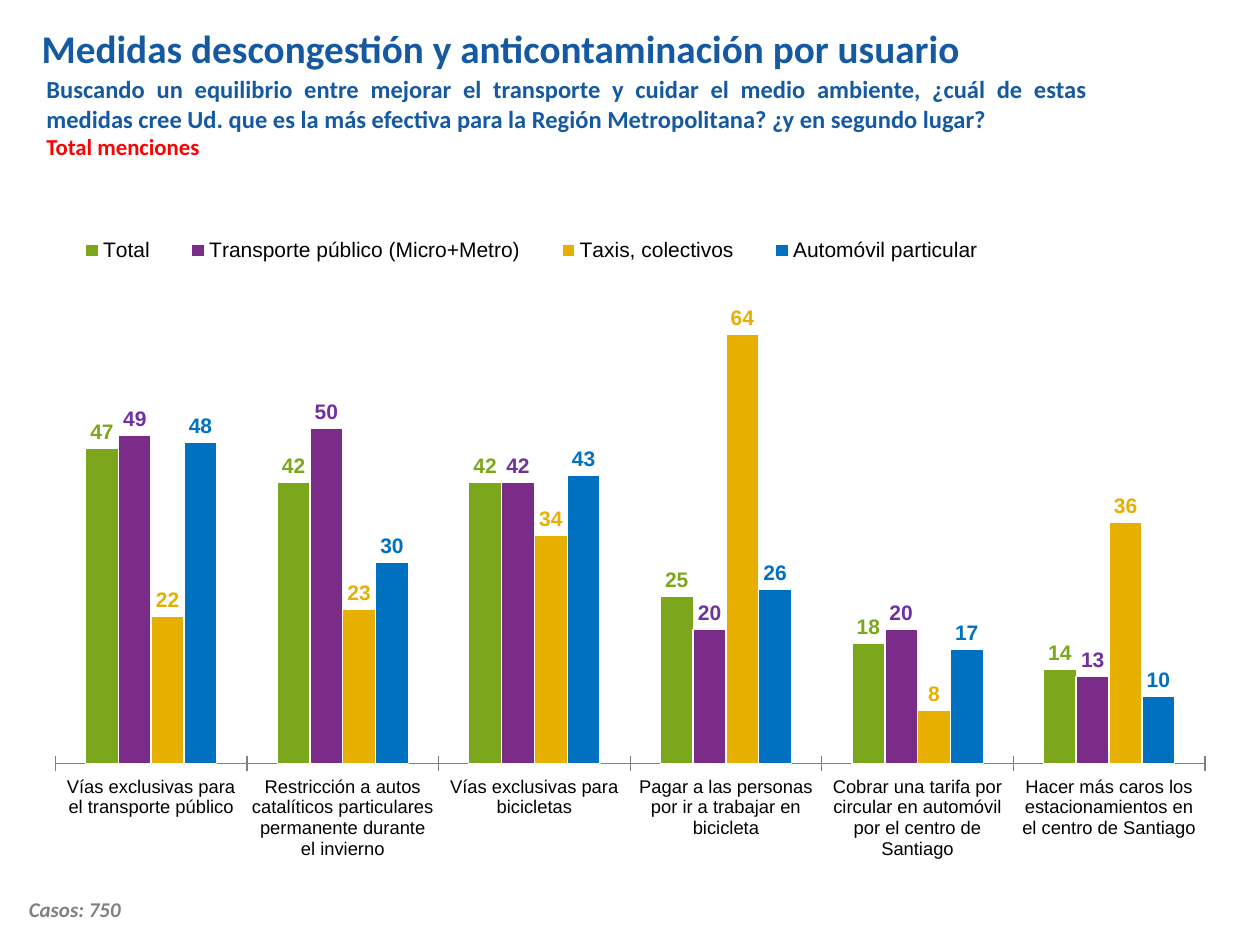
import pptx
import pptx.util
import pptx.chart.data
import pptx.dml.color
import pptx.enum.chart
import pptx.enum.text
import pptx.oxml
import pptx.oxml.ns

Inches = pptx.util.Inches
Pt = pptx.util.Pt
TEXT = pptx.enum.text
CHART = pptx.enum.chart

HUES = {
    "blue": "1559A2", "red": "FF0000", "grey": "808080", "black": "000000",
    "white": "FFFFFF", "green": "7CA71D", "plum": "7B2C88",
    "violet": "7030A0", "gold": "E7AF00", "sky": "0070C0",
}
CATS = [
    "Vías exclusivas para el transporte público",
    "Restricción a autos catalíticos particulares permanente durante el invierno",
    "Vías exclusivas para bicicletas",
    "Pagar a las personas por ir a trabajar en bicicleta",
    "Cobrar una tarifa por circular en automóvil por el centro de Santiago",
    "Hacer más caros los estacionamientos en el centro de Santiago",
]
# Name, values, bar colour, label colour, outline width
USERS = [
    ("Total", (47, 42, 42, 25, 18, 14), "green", "green", 0.75),
    ("Transporte público (Micro+Metro)", (49, 50, 42, 20, 20, 13), "plum", "violet", 1),
    ("Taxis, colectivos", (22, 23, 34, 64, 8, 36), "gold", "gold", 0.75),
    ("Automóvil particular", (48, 30, 43, 26, 17, 10), "sky", "sky", 0.75),
]


def rgb(name):
    return pptx.dml.color.RGBColor.from_string(HUES[name])


def style(font, size, hue, face="Calibri", bold=False, italic=False):
    font.size, font.name = Pt(size), face
    font.bold, font.italic = bold, italic
    font.color.rgb = rgb(hue)


def place(shape, left, top, width, height):
    shape.left, shape.top = Inches(left), Inches(top)
    shape.width, shape.height = Inches(width), Inches(height)


def add_title(slide, text):
    title = slide.shapes.title
    place(title, 0.23, 0.06, 9.21, 0.64)
    frame = title.text_frame
    frame.text = text
    frame.auto_size = TEXT.MSO_AUTO_SIZE.NONE
    frame.vertical_anchor = TEXT.MSO_ANCHOR.MIDDLE
    para = frame.paragraphs[0]
    para.alignment = TEXT.PP_ALIGN.LEFT
    style(para.runs[0].font, 22.4, "blue", bold=True)


def add_text(slide, box, lines, align, wrap=True, italic=False):
    """Add a text box; each line is (text, size, colour)."""
    frame = slide.shapes.add_textbox(*map(Inches, box)).text_frame
    frame.word_wrap = wrap
    frame.auto_size = TEXT.MSO_AUTO_SIZE.SHAPE_TO_FIT_TEXT
    frame.text = "\n".join(line[0] for line in lines)
    for para, (_, size, hue) in zip(frame.paragraphs, lines):
        para.alignment = align
        style(para.runs[0].font, size, hue, bold=True, italic=italic)


def set_layout(part, index, box, inner=False):
    """Give a chart part a manual layout, as fractions of the chart."""
    for old in part.findall(pptx.oxml.ns.qn("c:layout")):
        part.remove(old)
    target = '<c:layoutTarget val="inner"/>' if inner else ""
    modes = "".join(f'<c:{k}Mode val="edge"/>' for k in "xy")
    sizes = "".join(f'<c:{k} val="{v}"/>' for k, v in zip("xywh", box))
    part.insert(index, pptx.oxml.parse_xml(
        f'<c:layout {pptx.oxml.ns.nsdecls("c")}><c:manualLayout>'
        f"{target}{modes}{sizes}</c:manualLayout></c:layout>"))


def style_bars(bars, fill, label, width):
    bars.smooth = False
    bars.format.fill.solid()
    bars.format.fill.fore_color.rgb = rgb(fill)
    bars.format.line.color.rgb = rgb("white")
    bars.format.line.width = Pt(width)
    tags = bars.data_labels
    tags.show_value = True
    tags.number_format, tags.number_format_is_linked = "0", False
    tags.position = CHART.XL_LABEL_POSITION.OUTSIDE_END
    style(tags.font, 12, label, "Arial", bold=True)


def add_bars(slide):
    data = pptx.chart.data.CategoryChartData(number_format="0")
    data.categories = CATS
    for name, vals, *_ in USERS:
        data.add_series(name, vals)
    box = map(Inches, (0.31, 1.73, 9.31, 5.15))
    chart = slide.shapes.add_chart(
        CHART.XL_CHART_TYPE.COLUMN_CLUSTERED, *box, data).chart
    style(chart.font, 12, "black")
    chart.has_title = False

    # Bars
    plot = chart.plots[0]
    plot.vary_by_categories = False
    plot.gap_width, plot.overlap = 184, 0
    for bars, (_, _, fill, label, width) in zip(plot.series, USERS):
        style_bars(bars, fill, label, width)

    # Axes
    axis = chart.category_axis
    axis.major_tick_mark = CHART.XL_TICK_MARK.CROSS
    axis.format.line.color.rgb = rgb("grey")
    style(axis.tick_labels.font, 10.5, "black", "Arial")
    scale = chart.value_axis
    scale.minimum_scale, scale.maximum_scale = 0, 70
    scale.has_major_gridlines = False
    scale.visible = False

    # Legend and plot area
    chart.has_legend = True
    legend = chart.legend
    legend.position = CHART.XL_LEGEND_POSITION.TOP
    legend.include_in_layout = False
    style(legend.font, 12, "black", "Arial")
    set_layout(legend._element, 1, (0.01, 0.01, 0.82, 0.08))
    area = chart._chartSpace.chart.plotArea
    set_layout(area, 0, (0.014, 0.118, 0.98, 0.723), inner=True)


def main():
    deck = pptx.Presentation()
    deck.slide_width, deck.slide_height = Inches(10), Inches(7.5)
    slide = deck.slides.add_slide(deck.slide_layouts[5])

    # Sample size and chart
    add_text(slide, (0.13, 7.07, 1.09, 0.3), [("Casos: 750", 12, "grey")],
             TEXT.PP_ALIGN.LEFT, wrap=False, italic=True)
    add_bars(slide)

    # Title and question
    add_title(slide, "Medidas descongestión y anticontaminación por usuario")
    add_text(slide, (0.27, 0.54, 8.46, 1.04), [
        ("Buscando un equilibrio entre mejorar el transporte y cuidar el medio "
         "ambiente, ¿cuál de estas medidas cree Ud. que es la más efectiva para "
         "la Región Metropolitana? ¿y en segundo lugar?", 14, "blue"),
        ("Total menciones", 13, "red"),
    ], TEXT.PP_ALIGN.JUSTIFY)

    deck.save("out.pptx")


if __name__ == "__main__":
    main()
